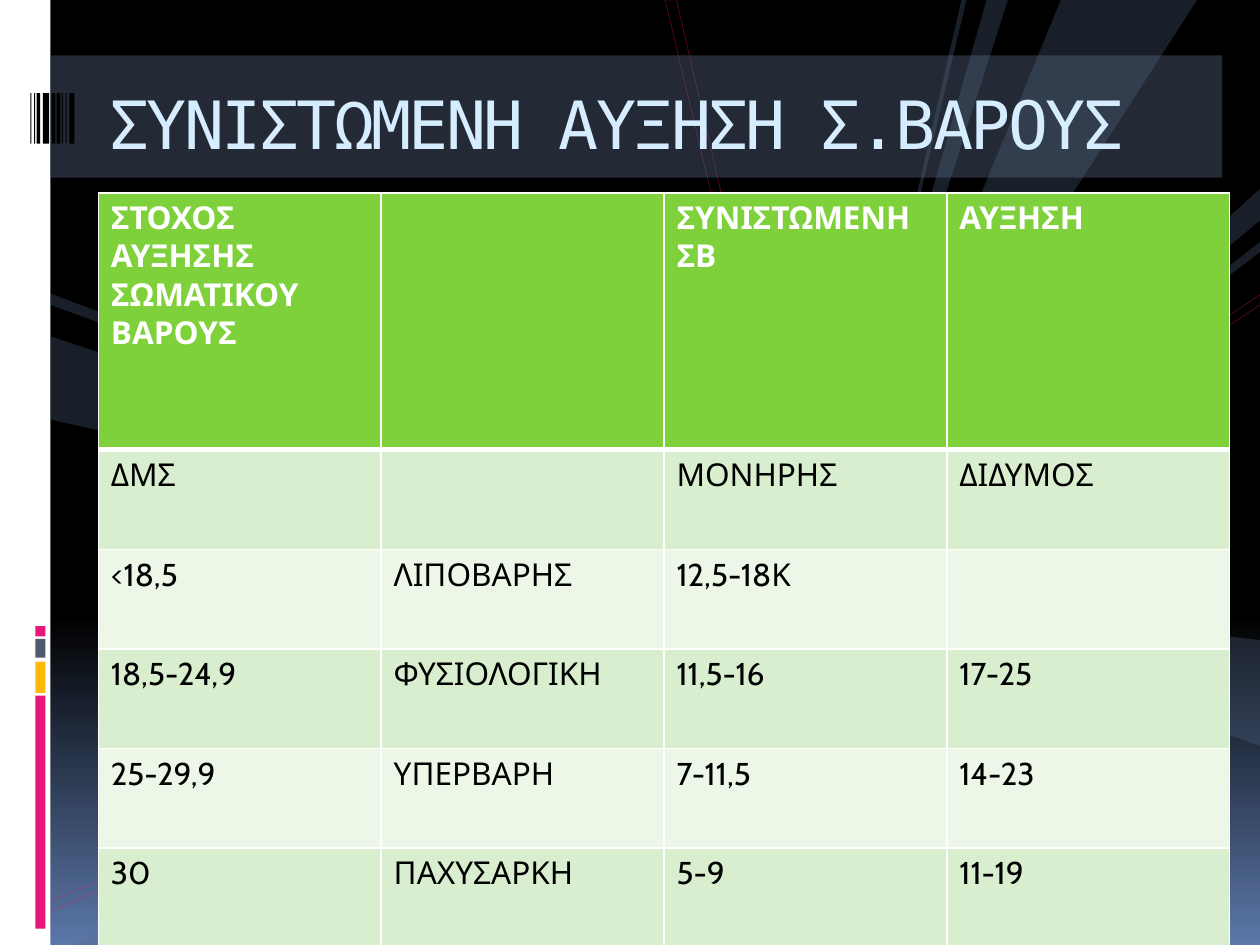
from lxml import etree
from pptx import Presentation
from pptx.dml.color import RGBColor
from pptx.enum.shapes import MSO_SHAPE
from pptx.enum.text import MSO_ANCHOR, PP_ALIGN
from pptx.oxml.ns import qn
from pptx.util import Cm, Pt

RECTANGLE = MSO_SHAPE.RECTANGLE
TOP = MSO_ANCHOR.TOP
LEFT = PP_ALIGN.LEFT

BLACK = RGBColor(0x00, 0x00, 0x00)
WHITE = RGBColor(0xFF, 0xFF, 0xFF)
SKY = RGBColor(0x5B, 0x77, 0xA8)
PINK = RGBColor(0xEA, 0x15, 0x7A)
AMBER = RGBColor(0xFE, 0xB8, 0x0A)
SLATE = RGBColor(0x4E, 0x5B, 0x6F)
BEAM = RGBColor(0x56, 0x69, 0x89)
BAND = RGBColor(0x58, 0x6A, 0x86)
PALE_BLUE = RGBColor(0xD6, 0xEC, 0xFF)
GREEN = RGBColor(0x7F, 0xD1, 0x3B)
GREEN_TINTS = (RGBColor(0xEC, 0xF7, 0xE8), RGBColor(0xD8, 0xEE, 0xCE))

TITLE = "ΣΥΝΙΣΤΩΜΕΝΗ ΑΥΞΗΣΗ Σ.ΒΑΡΟΥΣ"
ROWS = [
    ("ΣΤΟΧΟΣ ΑΥΞΗΣΗΣ ΣΩΜΑΤΙΚΟΥ ΒΑΡΟΥΣ", "", "ΣΥΝΙΣΤΩΜΕΝΗ\nΣΒ", "ΑΥΞΗΣΗ"),
    ("ΔΜΣ", "", "ΜΟΝΗΡΗΣ", "ΔΙΔΥΜΟΣ"),
    ("<18,5", "ΛΙΠΟΒΑΡΗΣ", "12,5-18Κ", ""),
    ("18,5-24,9", "ΦΥΣΙΟΛΟΓΙΚΗ", "11,5-16", "17-25"),
    ("25-29,9", "ΥΠΕΡΒΑΡΗ", "7-11,5", "14-23"),
    ("30", "ΠΑΧΥΣΑΡΚΗ", "5-9", "11-19"),
]
HEADER_HEIGHT, ROW_HEIGHT, COLUMN_WIDTH = 2.04, 0.79, 2.245

SIDE_BLOCKS = [(5.52, 1.85, PINK), (5.25, 0.25, AMBER), (5.07, 0.15, SLATE), (4.97, 0.08, PINK)]
BARCODE = [
    (0.24, 0.01), (0.27, 0.01), (0.29, 0.03), (0.34, 0.05), (0.41, 0.03),
    (0.45, 0.03), (0.49, 0.01), (0.52, 0.01), (0.55, 0.04),
]
OUTLINES = [
    [(5.28, 7.5), (6.52, 4.67), (10, 2.34), (10, 2.42), (6.57, 4.71), (5.36, 7.5)],
    [(0.41, 7.15), (0.41, 7.23), (6.44, 4.63), (5.37, 0), (5.28, 0), (6.37, 4.59)],
]
BEAMS = [
    [(7.67, 0), (6.59, 4.55), (7.63, 0)],
    [(8.42, 0), (9.5, 0), (6.5, 4.67)],
    [(6.5, 4.67), (10, 5.08), (10, 5.92)],
    [(8, 0), (6.5, 4.67), (7.83, 0)],
    [(8.36, 7.5), (8.79, 7.5), (6.51, 4.64)],
    [(8.25, 7.5), (6.5, 4.67), (8.17, 7.5)],
    [(10, 1.5), (10, 1.75), (6.5, 4.67)],
    [(10, 1.92), (6.5, 4.67), (10, 2)],
    [(1.08, 7.5), (6.5, 4.67), (2.92, 7.5)],
    [(0.58, 7.5), (6.42, 4.67), (0.83, 7.5)],
    [(0.4, 2.67), (6.48, 4.67), (0.4, 3.33)],
    [(0.4, 2.33), (6.57, 4.67), (0.4, 2.42)],
    [(5, 7.5), (5.17, 7.5), (6.5, 4.67)],
]


def inches(value):
    return Cm(value * 2.54)


def set_opacity(fill_parent, percent):
    color = fill_parent.find(qn("a:solidFill"))[0]
    etree.SubElement(color, qn("a:alpha"), val=str(percent * 1000))


def paint(shape, color, opacity=100):
    shape.shadow.inherit = False
    shape.fill.solid()
    shape.fill.fore_color.rgb = color
    shape.line.fill.background()
    if opacity < 100:
        set_opacity(shape._element.spPr, opacity)


def add_rectangle(shapes, left, top, width, height, color, opacity=100):
    box = [inches(value) for value in (left, top, width, height)]
    paint(shapes.add_shape(RECTANGLE, *box), color, opacity)


def add_polygon(shapes, points):
    first, *rest = [(inches(x), inches(y)) for x, y in points]
    builder = shapes.build_freeform(*first)
    builder.add_line_segments(rest, close=True)
    return builder.convert_to_shape()


def add_outline(shapes, points):
    shape = add_polygon(shapes, points)
    shape.shadow.inherit = False
    shape.fill.background()
    shape.line.color.rgb = PINK
    shape.line.width = Pt(0.25)
    set_opacity(shape.line._ln, 53)


def set_borders(cell, bottom_width):
    properties = cell._tc.get_or_add_tcPr()
    widths = (("lnL", 1), ("lnR", 1), ("lnT", 1), ("lnB", bottom_width))
    for index, (side, width) in enumerate(widths):
        line = etree.Element(qn(f"a:{side}"), w=str(Pt(width)))
        fill = etree.SubElement(line, qn("a:solidFill"))
        etree.SubElement(fill, qn("a:srgbClr"), val=str(WHITE))
        properties.insert(index, line)


def add_title(shapes):
    box = shapes.add_textbox(inches(0.77), inches(0.56), inches(8.92), inches(0.85))
    frame = box.text_frame
    frame.word_wrap = True
    frame.vertical_anchor = TOP
    frame.margin_top = inches(0.1)
    paragraph = frame.paragraphs[0]
    paragraph.text = TITLE
    paragraph.alignment = LEFT
    paragraph.font.name = "DejaVu Sans Mono"
    paragraph.font.size = Pt(38)
    paragraph.font.color.rgb = PALE_BLUE
    paragraph.runs[0].font._element.set("spc", "-150")


def add_weight_table(shapes):
    columns = len(ROWS[0])
    height = HEADER_HEIGHT + ROW_HEIGHT * (len(ROWS) - 1)
    table = shapes.add_table(
        len(ROWS), columns, inches(0.78), inches(1.53),
        inches(COLUMN_WIDTH * columns), inches(height),
    ).table
    for column in table.columns:
        column.width = inches(COLUMN_WIDTH)
    for row_index, texts in enumerate(ROWS):
        header = row_index == 0
        table.rows[row_index].height = inches(HEADER_HEIGHT if header else ROW_HEIGHT)
        for column_index, text in enumerate(texts):
            cell = table.cell(row_index, column_index)
            cell.text = text
            cell.fill.solid()
            cell.fill.fore_color.rgb = GREEN if header else GREEN_TINTS[row_index % 2]
            set_borders(cell, 3 if header else 1)
            for paragraph in cell.text_frame.paragraphs:
                paragraph.font.name = "Cabin"
                paragraph.font.size = Pt(18)
                paragraph.font.bold = header
                paragraph.font.color.rgb = WHITE if header else BLACK


def main():
    presentation = Presentation()
    presentation.slide_width, presentation.slide_height = inches(10), inches(7.5)
    slide = presentation.slides.add_slide(presentation.slide_layouts[6])
    shapes = slide.shapes

    background = slide.background.fill
    background.gradient()
    background.gradient_angle = 270
    for stop, position, color in zip(background.gradient_stops, (0.65, 1), (BLACK, SKY)):
        stop.position = position
        stop.color.rgb = color

    add_rectangle(shapes, 0, 0, 0.4, 7.5, WHITE)
    for top, height, color in SIDE_BLOCKS:
        add_rectangle(shapes, 0.28, top, 0.08, height, color)
    for points in OUTLINES:
        add_outline(shapes, points)
    for points in BEAMS:
        paint(add_polygon(shapes, points), BEAM, 30)
    add_rectangle(shapes, 0.4, 0.44, 9.3, 0.97, BAND, 40)
    for left, width in BARCODE:
        add_rectangle(shapes, left, 0.74, width, 0.4, BLACK)
    add_title(shapes)
    add_weight_table(shapes)
    presentation.save("out.pptx")


if __name__ == "__main__":
    main()
